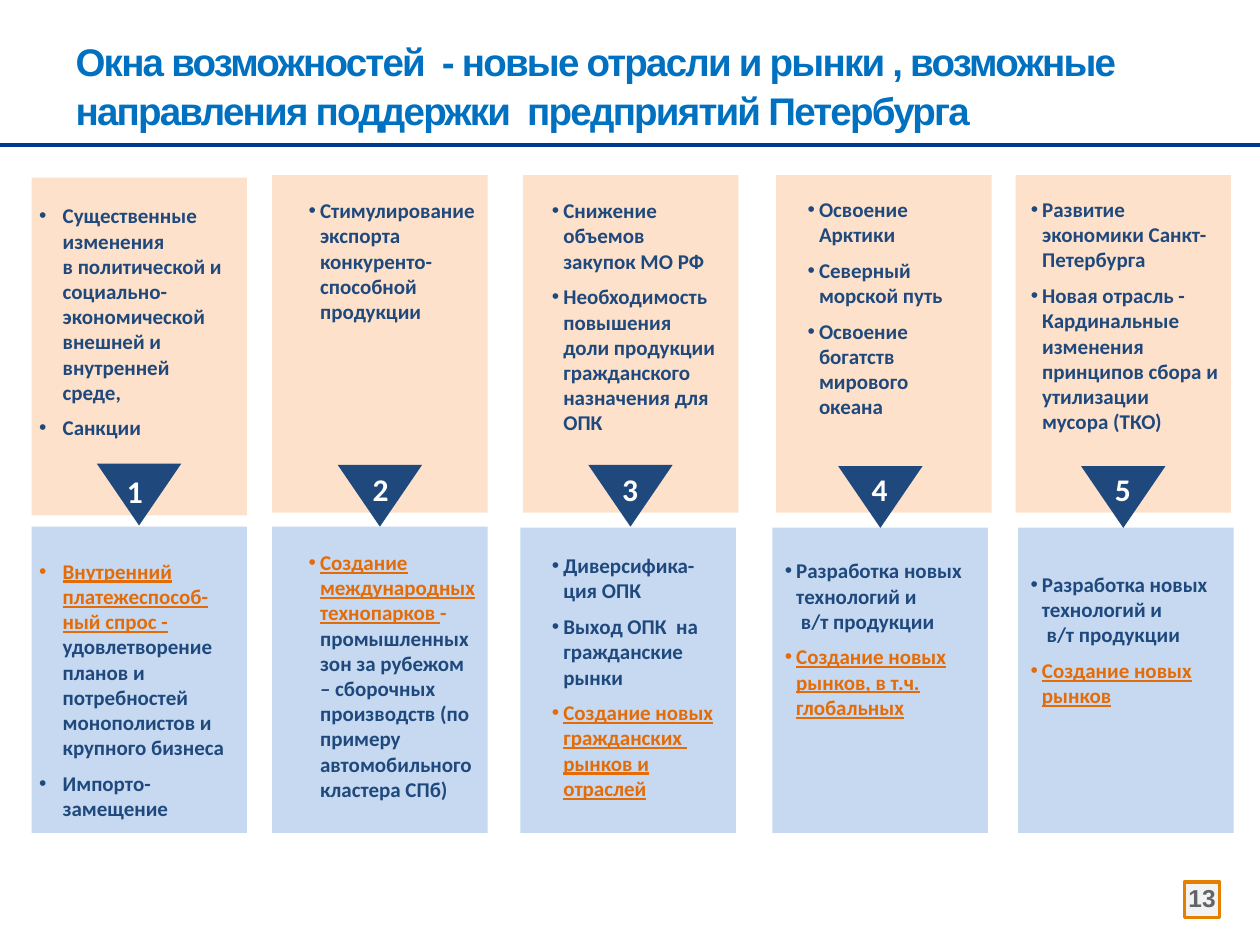
from dataclasses import dataclass

from lxml import etree
from pptx import Presentation
from pptx.dml.color import RGBColor
from pptx.enum.shapes import MSO_CONNECTOR, MSO_SHAPE
from pptx.enum.text import MSO_ANCHOR, MSO_AUTO_SIZE, PP_ALIGN
from pptx.oxml.ns import qn
from pptx.util import Pt

RECT, TRIANGLE = MSO_SHAPE.RECTANGLE, MSO_SHAPE.ISOSCELES_TRIANGLE
STRAIGHT = MSO_CONNECTOR.STRAIGHT
TOP, MIDDLE, BOTTOM = MSO_ANCHOR.TOP, MSO_ANCHOR.MIDDLE, MSO_ANCHOR.BOTTOM
LEFT, CENTER = PP_ALIGN.LEFT, PP_ALIGN.CENTER
NO_FIT = MSO_AUTO_SIZE.NONE


@dataclass(frozen=True)
class Theme:
    head_font: str = "Arial"
    body_font: str = "Calibri"
    title: str = "0070C0"
    rule: str = "003A8E"
    navy: str = "1F497D"
    accent: str = "E36C09"
    peach: str = "FDE1CA"
    sky: str = "C6D9F1"
    white: str = "FFFFFF"
    badge_fill: str = "F2F2F2"
    badge_line: str = "E47F00"
    badge_text: str = "626469"
    title_size: int = 22
    number_size: int = 18
    badge_size: int = 14
    body_size: int = 12


THEME = Theme()
CARD_W = 123.1


@dataclass(frozen=True)
class Card:
    left: float
    top: float
    height: float
    margins: tuple
    items: tuple
    indent: float = 6.5


def plain(text):
    return ((text, THEME.navy, False),)


def accent(text):
    return ((text, THEME.accent, True),)


UPPER = (
    Card(18, 101.5, 193, (4.3, 14.4, 10), (
        plain("Существенные изменения \nв политической и социально-экономической внешней и внутренней среде,"),
        plain("Санкции")), 13.5),
    Card(155.5, 100, 193, (20.9, 13, 5), (
        plain("Стимулирование экспорта конкуренто-способной продукции"),)),
    Card(298.8, 100, 193, (16.6, 13, 10), (
        plain("Снижение объемов закупок МО РФ"),
        plain("Необходимость повышения доли продукции гражданского назначения для ОПК"))),
    Card(443.5, 100, 193, (18, 12.3, 15.8), (
        plain("Освоение Арктики"),
        plain("Северный морской путь"),
        plain("Освоение богатств мирового океана"))),
    Card(580.3, 100, 193, (8.7, 12.3, 6.8), (
        plain("Развитие экономики Санкт-Петербурга"),
        plain("Новая отрасль - Кардинальные изменения принципов сбора и утилизации мусора (ТКО)"))),
)

NEW_TECH = plain("Разработка новых технологий и\n в/т продукции")

LOWER = (
    Card(18, 301, 175, (4.3, 18, 10), (
        accent("Внутренний платежеспособ-ный спрос - ")
        + plain("удовлетворение планов и потребностей монополистов и крупного бизнеса"),
        plain("Импорто-замещение")), 13.5),
    Card(155.5, 301, 175, (20.9, 13, 5), (
        accent("Создание международных технопарков ")
        + (("- ", THEME.accent, False),)
        + plain("промышленных зон за рубежом – сборочных производств (по примеру автомобильного кластера СПб)"),)),
    Card(297.4, 301.5, 174.5, (18, 14.4, 8.7), (
        plain("Диверсифика-ция ОПК"),
        plain("Выход ОПК  на гражданские рынки"),
        accent("Создание новых гражданских  рынков и отраслей"))),
    Card(441.4, 301.5, 174.5, (7.2, 17.3, 7.2), (
        NEW_TECH, accent("Создание новых рынков, в т.ч. глобальных"))),
    Card(581.8, 301.5, 174.5, (7.2, 25, 7.2), (
        NEW_TECH, accent("Создание новых рынков"))),
)

MARKERS = (
    (55.4, 265, 65.5, 266.4),
    (193, 265.7, 205.9, 265),
    (336.2, 265.7, 348.5, 265),
    (479, 266.4, 491, 265),
    (617.8, 266.4, 630, 265),
)


def rgb(value):
    return RGBColor.from_string(value)


def add_run(p, text, font, size, color, underline=False):
    for i, line in enumerate(text.split("\n")):
        if i:
            p.add_line_break()
        r = p.add_run()
        r.text = line
        r.font.name, r.font.size, r.font.bold = font, Pt(size), True
        r.font.color.rgb = rgb(color)
        r.font.underline = underline
    return r


def add_shape(s, kind, left, top, width, height, fill):
    sp = s.shapes.add_shape(kind, Pt(left), Pt(top), Pt(width), Pt(height))
    sp.shadow.inherit = False
    sp.fill.solid()
    sp.fill.fore_color.rgb = rgb(fill)
    sp.line.fill.background()
    return sp


def set_bullet(p, indent):
    pPr = p._p.get_or_add_pPr()
    pPr.set("marL", str(Pt(indent)))
    pPr.set("indent", str(-Pt(indent)))
    etree.SubElement(pPr, qn("a:buFont")).set("typeface", "Arial")
    etree.SubElement(pPr, qn("a:buChar")).set("char", "•")


def add_card(s, card, fill):
    sp = add_shape(s, RECT, card.left, card.top, CARD_W, card.height, fill)
    tf = sp.text_frame
    tf.word_wrap, tf.vertical_anchor = True, TOP
    tf.margin_left, tf.margin_top, tf.margin_right = map(Pt, card.margins)
    tf.margin_bottom = 0
    for i, runs in enumerate(card.items):
        p = tf.add_paragraph() if i else tf.paragraphs[0]
        set_bullet(p, card.indent)
        p.alignment, p.space_after = LEFT, Pt(6)
        for text, color, underline in runs:
            add_run(p, text, THEME.body_font, THEME.body_size, color, underline)


def add_marker(s, number, left, top, text_left, text_top):
    sp = add_shape(s, TRIANGLE, left, top, 48.2, 35.3, THEME.navy)
    sp._element.spPr.find(qn("a:xfrm")).set("flipV", "1")
    tf = s.shapes.add_textbox(Pt(text_left), Pt(text_top), Pt(23.8), Pt(29)).text_frame
    tf.word_wrap = False
    add_run(tf.paragraphs[0], str(number), THEME.body_font, THEME.number_size, THEME.white)


def add_title(s, text):
    sp = s.shapes.title
    sp.left, sp.top, sp.width, sp.height = Pt(36), Pt(18.7), Pt(661.7), Pt(61.2)
    tf = sp.text_frame
    tf.word_wrap, tf.auto_size, tf.vertical_anchor = True, NO_FIT, BOTTOM
    p = tf.paragraphs[0]
    p.alignment, p.line_spacing = LEFT, 1.06
    r = add_run(p, text, THEME.head_font, THEME.title_size, THEME.title)
    r._r.get_or_add_rPr().set("spc", "-100")


def add_rule(s, y):
    line = s.shapes.add_connector(STRAIGHT, Pt(0), Pt(y), Pt(720), Pt(y))
    line.line.color.rgb = rgb(THEME.rule)
    line.line.width = Pt(2.5)
    etree.SubElement(line._element.spPr, qn("a:effectLst"))


def add_page_badge(s, number):
    sp = add_shape(s, RECT, 676.8, 504, 20.2, 20.2, THEME.badge_fill)
    sp.line.color.rgb = rgb(THEME.badge_line)
    sp.line.width = Pt(2)
    tf = sp.text_frame
    tf.word_wrap, tf.vertical_anchor = False, MIDDLE
    tf.margin_left = tf.margin_top = tf.margin_right = tf.margin_bottom = Pt(5.8)
    p = tf.paragraphs[0]
    p.alignment, p.line_spacing = CENTER, 0.9
    add_run(p, number, THEME.head_font, THEME.badge_size, THEME.badge_text)


def main():
    prs = Presentation()
    prs.slide_width, prs.slide_height = Pt(720), Pt(540)
    s = prs.slides.add_slide(prs.slide_layouts[5])
    add_rule(s, 82.8)
    add_page_badge(s, "13")
    add_title(s, "Окна возможностей  - новые отрасли и рынки , возможные направления поддержки  предприятий Петербурга")
    for cards, fill in ((UPPER, THEME.peach), (LOWER, THEME.sky)):
        for card in cards:
            add_card(s, card, fill)
    for number, place in enumerate(MARKERS, 1):
        add_marker(s, number, *place)
    prs.save("out.pptx")


if __name__ == "__main__":
    main()
